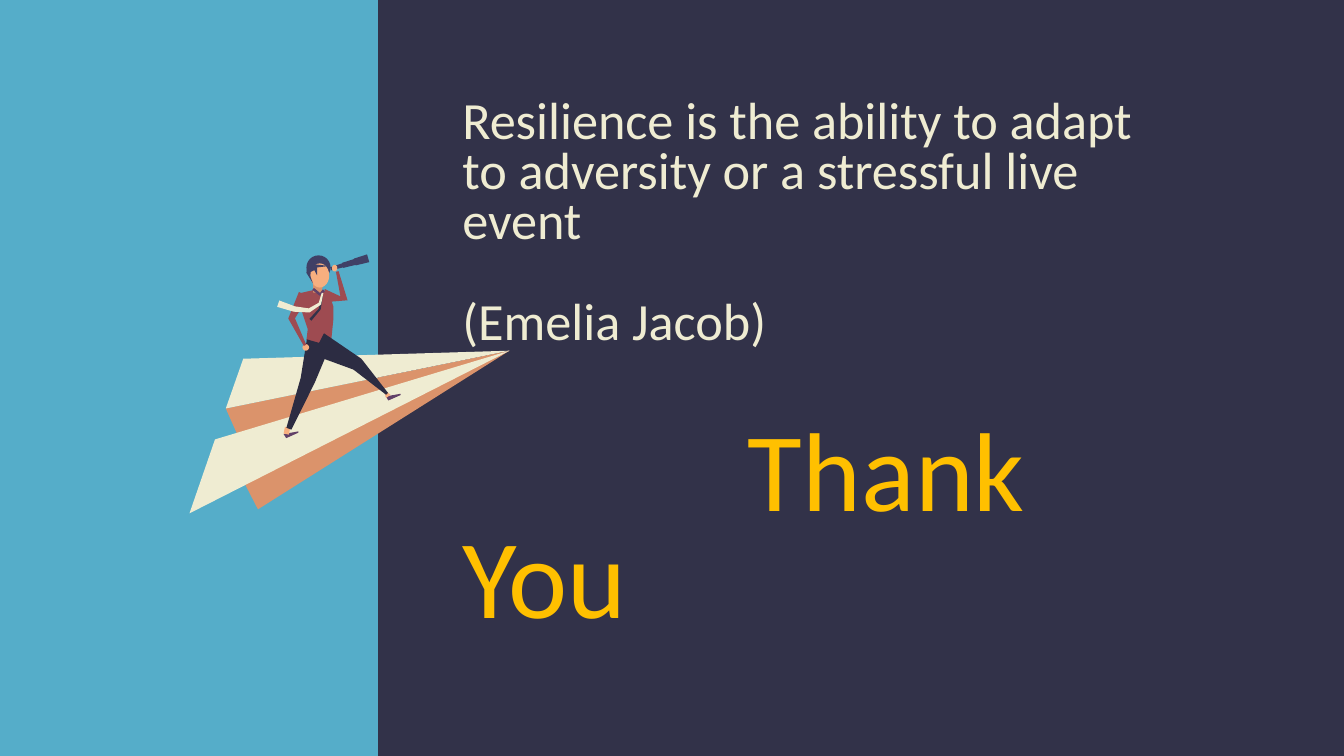
import math

from pptx import Presentation, util as u
from pptx.dml.color import RGBColor
from pptx.enum import shapes, text

NAVY = RGBColor(0x32, 0x32, 0x49)
BLUE = RGBColor(0x55, 0xAD, 0xC9)
CREAM = RGBColor(0xEF, 0xEC, 0xD2)
GOLD = RGBColor(0xFF, 0xC0, 0x00)
CLAY = RGBColor(0xDB, 0x93, 0x6B)
SKIN = RGBColor(0xF7, 0xAF, 0x7F)
RED = RGBColor(0x9E, 0x4B, 0x51)
DARK = RGBColor(0x2C, 0x2C, 0x42)
STEEL = RGBColor(0x40, 0x40, 0x66)
PLUM = RGBColor(0x61, 0x40, 0x68)

GRID = 0.72  # points per drawing unit


class Deck:
    font = "Calibri"
    lead = 0.8

    def __init__(self, wide, high):
        self.show = Presentation()
        self.show.slide_width, self.show.slide_height = u.Pt(wide), u.Pt(high)
        self.slide = self.show.slides.add_slide(self.show.slide_layouts[5])
        back = self.slide.background.fill
        back.solid()
        back.fore_color.rgb = NAVY

    def paint(self, shape, tint):
        shape.fill.solid()
        shape.fill.fore_color.rgb = tint
        shape.line.fill.background()
        shape.shadow.inherit = False

    def title(self, box, parts):
        """Fill the title; parts hold words, size, tint, gap and indent."""
        head = self.slide.shapes.title
        head.left, head.top, head.width, head.height = map(u.Pt, box)
        frame = head.text_frame
        frame.word_wrap = True
        frame.auto_size = text.MSO_AUTO_SIZE.NONE
        frame.vertical_anchor = text.MSO_ANCHOR.TOP
        frame.margin_left = frame.margin_right = u.Pt(7.2)
        frame.margin_top = frame.margin_bottom = u.Pt(7.2)
        for i, (words, size, tint, gap, indent) in enumerate(parts):
            para = frame.add_paragraph() if i else frame.paragraphs[0]
            para.alignment = text.PP_ALIGN.LEFT
            para.line_spacing = self.lead
            para.space_before = u.Pt(gap)
            para._p.get_or_add_pPr().set("indent", str(u.Pt(indent)))
            run = para.add_run()
            run.text = words
            run.font.name, run.font.size = self.font, u.Pt(size)
            run.font.color.rgb = tint

    def block(self, box, tint):
        kind = shapes.MSO_SHAPE.RECTANGLE
        self.paint(self.slide.shapes.add_shape(kind, *map(u.Pt, box)), tint)

    def group(self):
        self.art = self.slide.shapes.add_group_shape().shapes

    def oval(self, tint, x, y, wide, high):
        box = [u.Pt(n * GRID) for n in (x, y, wide, high)]
        self.paint(self.art.add_shape(shapes.MSO_SHAPE.OVAL, *box), tint)

    def poly(self, tint, *dots):
        first, *rest = [(u.Pt(x * GRID), u.Pt(y * GRID)) for x, y in dots]
        pen = self.art.build_freeform(*first)
        pen.add_line_segments(rest, close=True)
        self.paint(pen.convert_to_shape(), tint)

    def limb(self, tint, wide, thin, *joints):
        """Draw a band through the joints, tapering in half width."""
        last = len(joints) - 1
        left, right = [], []
        for i, (x, y) in enumerate(joints):
            a, b = joints[max(i - 1, 0)], joints[min(i + 1, last)]
            turn = math.atan2(b[1] - a[1], b[0] - a[0])
            half = wide + (thin - wide) * i / last
            dx, dy = -half * math.sin(turn), half * math.cos(turn)
            left.append((x + dx, y + dy))
            right.append((x - dx, y - dy))
        self.poly(tint, *left, *reversed(right))


def plane(deck):
    nose = (379, 261)
    deck.poly(CLAY, nose, (176, 348), (192, 379))
    deck.poly(CLAY, nose, (168, 304), (180, 331))
    deck.poly(CREAM, nose, (181, 267), (168, 304))
    deck.poly(CREAM, nose, (160, 327), (141, 382))


def man(deck):
    # Telescope: three tubes, each wider than the one before
    for k in range(3):
        x, y, half = 246 + 9 * k, 200 - 2.5 * k, 1.2 + 0.7 * k
        deck.limb(STEEL, half, half + 0.4, (x, y), (x + 10, y - 2.8))
    deck.oval(SKIN, 247, 197, 4, 5)
    # Raised arm and jumper
    deck.limb(RED, 5, 1, (241, 220), (256, 222), (251, 202))
    deck.poly(RED, (224, 218), (237, 215), (245, 219), (248, 228), (248, 238),
              (246, 258), (240, 259), (228, 253), (229, 245), (223, 227))
    # Shoes
    for x, y in ((287, 298), (211, 326)):
        deck.poly(PLUM, (x, y - 3), (x + 11, y - 5), (x + 11, y - 4), (x + 2, y))
    # Trousers and ankles
    deck.limb(SKIN, 2, 2, (214, 318), (213, 323))
    deck.limb(SKIN, 1, 2, (287, 292), (289, 295))
    deck.limb(DARK, 9, 1, (237, 256), (266, 271), (288, 293))
    deck.limb(DARK, 9, 2, (237, 255), (229, 283), (215, 319))
    # Hand on hip
    deck.oval(SKIN, 225, 256, 5, 5)
    deck.limb(RED, 4, 1, (226, 219), (217, 237), (227, 257))
    # Neck, face and hair
    deck.limb(CLAY, 4, 3, (237, 209), (236, 218))
    deck.oval(STEEL, 228, 190, 18, 18)
    deck.oval(SKIN, 231, 196, 14, 18)
    deck.poly(STEEL, (229, 196), (245, 198), (236, 199), (236, 205), (234, 201),
              (230, 203), (233, 211), (228, 203))
    # Collar and tie
    deck.limb(PLUM, 1, 1, (233, 215), (238, 219), (241, 216))
    deck.limb(NAVY, 0.5, 1, (240, 219), (238, 230), (231, 238))
    deck.limb(CREAM, 0.6, 2.5, (240, 218), (238, 226), (230, 231),
              (219, 230), (207, 226))


def main():
    deck = Deck(720, 405)
    # Quote, author and thanks
    deck.title((240.5, 46, 394.5, 105), [
        ("Resilience is the ability to adapt to adversity or a stressful live event",
         28, CREAM, 0, 0),
        ("(Emelia Jacob)", 28, CREAM, 27, 0),
        ("Thank You", 60, GOLD, 40, 153),
    ])
    # Side panel and the explorer on a paper plane
    deck.block((0, 0, 202.5, 405), BLUE)
    deck.group()
    plane(deck)
    man(deck)
    deck.show.save("out.pptx")


if __name__ == "__main__":
    main()
